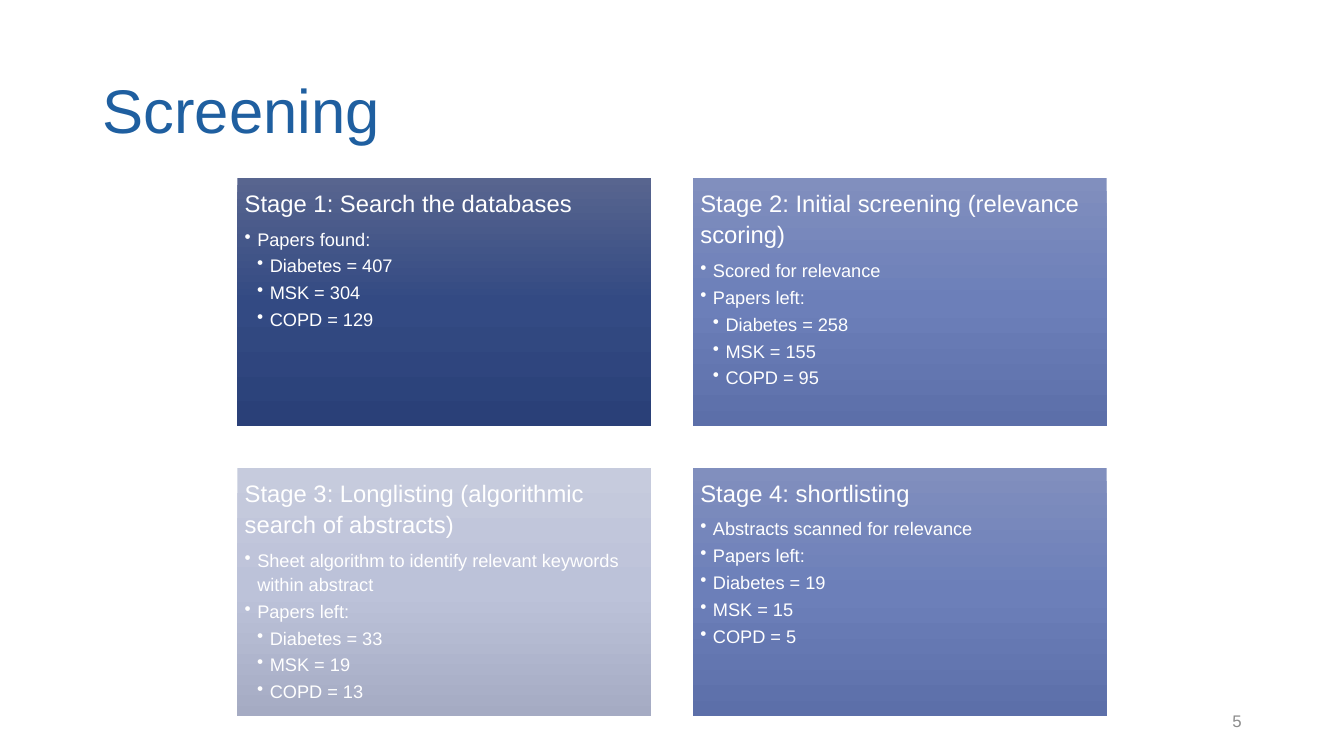
"""Build the Screening slide with its four stage cards."""
import copy
import dataclasses

import pptx
import pptx.dml.color
import pptx.enum.shapes
import pptx.enum.text
import pptx.oxml
import pptx.oxml.ns
import pptx.util

PX = 9525
ALIGN = pptx.enum.text.PP_ALIGN
ANCHOR = pptx.enum.text.MSO_ANCHOR


@dataclasses.dataclass(frozen=True)
class Theme:
    """Hold the font, colours and type sizes."""
    font: str = "Arial"
    title: str = "1F5FA0"
    note: str = "8C8C8C"
    text: str = "FFFFFF"
    dark: tuple = ("58658F", "334A83", "2A4078")
    mid: tuple = ("818FBE", "6C7FB9", "5C6FA9")
    pale: tuple = ("C6CBDD", "BCC2D9", "A5ABC3")
    big: int = 44
    head: int = 17
    body: int = 13
    small: int = 12


def rgb(code):
    """Turn a hex code into a colour."""
    return pptx.dml.color.RGBColor.from_string(code)


def write(para, text, *, font, size, color, align=ALIGN.LEFT, lead=1.0, after=0, level=0, step=12):
    """Fill a paragraph with formatted text, bulleted below the top level."""
    run = para.add_run()
    run.text = text
    run.font.name = font
    run.font.size = pptx.util.Pt(size)
    run.font.color.rgb = rgb(color)
    para.alignment = align
    para.line_spacing = lead
    para.space_before = pptx.util.Pt(0)
    para.space_after = pptx.util.Pt(after)
    para.level = level
    if level:
        props = para._p.get_or_add_pPr()
        props.set("marL", str(level * step * PX))
        props.set("indent", str(-step * PX))
        mark = pptx.oxml.parse_xml(f'<a:buChar {pptx.oxml.ns.nsdecls("a")} char="•"/>')
        props.append(mark)


class Deck:
    """Hold the style and the current slide."""

    def __init__(self, theme):
        """Open a deck with one title-only slide."""
        self.theme = theme
        self.file = pptx.Presentation()
        self.file.slide_width = 1280 * PX
        self.file.slide_height = 720 * PX
        self.slide = self.file.slides.add_slide(self.file.slide_layouts[5])

    def frame(self, shape, anchor, inset=None):
        """Set up the text frame of a shape."""
        frame = shape.text_frame
        frame.word_wrap = True
        frame.auto_size = pptx.enum.text.MSO_AUTO_SIZE.NONE
        frame.vertical_anchor = anchor
        if inset is not None:
            frame.margin_left = frame.margin_right = inset * PX
            frame.margin_top = frame.margin_bottom = inset * PX
        return frame

    def title(self, text, left, top, width, height):
        """Place the slide title."""
        shape = self.slide.shapes.title
        shape.left, shape.top = left * PX, top * PX
        shape.width, shape.height = width * PX, height * PX
        frame = self.frame(shape, ANCHOR.MIDDLE)
        write(frame.paragraphs[0], text, font=self.theme.font, size=self.theme.big,
              color=self.theme.title, lead=0.9)

    def number(self, text, left, top, width, height):
        """Add the page number."""
        box = self.slide.shapes.add_textbox(left * PX, top * PX, width * PX, height * PX)
        frame = self.frame(box, ANCHOR.MIDDLE)
        write(frame.paragraphs[0], text, font=self.theme.font, size=self.theme.small,
              color=self.theme.note, align=ALIGN.RIGHT)

    def shade(self, shape, tones):
        """Fill a shape with a three-tone gradient from top to bottom."""
        shape.fill.gradient()
        shape.fill.gradient_angle = 270
        first = shape._element.spPr.find(".//" + pptx.oxml.ns.qn("a:gs"))
        first.addnext(copy.deepcopy(first))
        for stop, place, tone in zip(shape.fill.gradient_stops, (0, 0.5, 1), tones):
            stop.position = place
            stop.color.rgb = rgb(tone)

    def card(self, tones, head, items, left, top, width, height):
        """Add a stage card with a heading and levelled bullets."""
        shape = self.slide.shapes.add_shape(
            pptx.enum.shapes.MSO_SHAPE.RECTANGLE, left * PX, top * PX, width * PX, height * PX)
        shape.shadow.inherit = False
        shape.line.fill.background()
        self.shade(shape, tones)
        frame = self.frame(shape, ANCHOR.TOP, inset=7)
        look = dict(font=self.theme.font, color=self.theme.text, lead=1.1)
        write(frame.paragraphs[0], head, size=self.theme.head, after=6, **look)
        for level, text in items:
            write(frame.add_paragraph(), text, size=self.theme.body, after=2, level=level, **look)


def main():
    """Build and save the slide."""
    theme = Theme()
    deck = Deck(theme)
    deck.title("Screening", 88, 39, 1104, 139)
    deck.number("5", 904, 667, 288, 38)
    stages = [
        (theme.dark, "Stage 1: Search the databases", ["Papers found:"], 2, (407, 304, 129)),
        (theme.mid, "Stage 2: Initial screening (relevance scoring)",
         ["Scored for relevance", "Papers left:"], 2, (258, 155, 95)),
        (theme.pale, "Stage 3: Longlisting (algorithmic search of abstracts)",
         ["Sheet algorithm to identify relevant keywords within abstract", "Papers left:"],
         2, (33, 19, 13)),
        (theme.mid, "Stage 4: shortlisting",
         ["Abstracts scanned for relevance", "Papers left:"], 1, (19, 15, 5)),
    ]
    wide, high, gap = 394, 236, 40
    for index, (tones, head, notes, level, counts) in enumerate(stages):
        row, col = divmod(index, 2)
        items = [(1, note) for note in notes]
        items += [(level, f"{topic} = {count}")
                  for topic, count in zip(("Diabetes", "MSK", "COPD"), counts)]
        deck.card(tones, head, items, 226 + col * (wide + gap), 170 + row * (high + gap), wide, high)
    deck.file.save("out.pptx")


if __name__ == "__main__":
    main()
